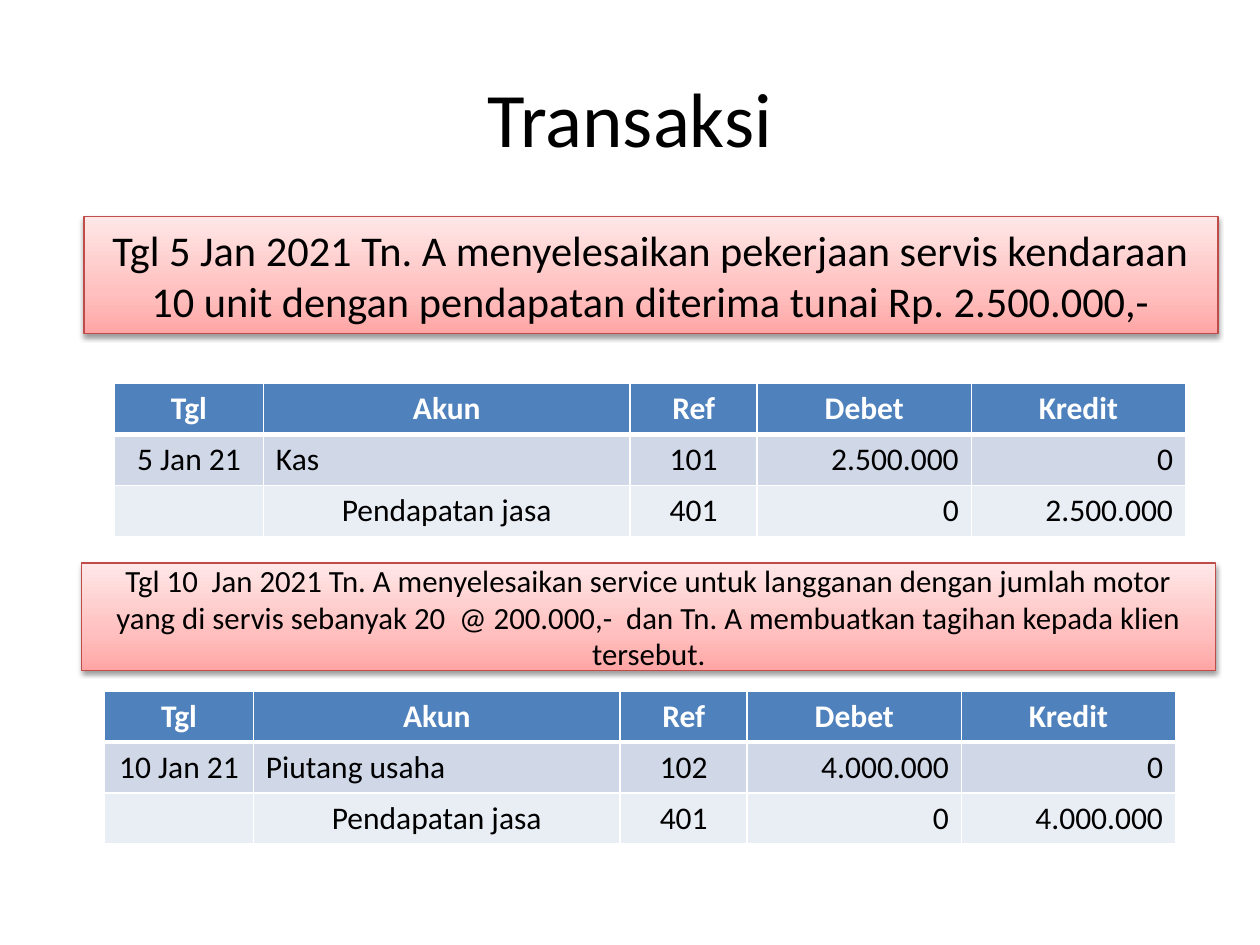
import copy
from dataclasses import dataclass

import lxml.etree
import pptx
import pptx.dml.color
import pptx.enum.shapes
import pptx.enum.text
import pptx.oxml
import pptx.oxml.ns
import pptx.slide
import pptx.table
import pptx.text.text
import pptx.util

Pt = pptx.util.Pt
RGBColor = pptx.dml.color.RGBColor
Align = pptx.enum.text.PP_ALIGN
qn = pptx.oxml.ns.qn

BLACK = RGBColor(0x00, 0x00, 0x00)
WHITE = RGBColor(0xFF, 0xFF, 0xFF)
HEADER_BLUE = RGBColor(0x4F, 0x81, 0xBD)
BAND_DARK = RGBColor(0xD0, 0xD8, 0xE8)
BAND_LIGHT = RGBColor(0xE9, 0xED, 0xF4)
BOX_LINE = RGBColor(0xBF, 0x4C, 0x48)
BOX_STOPS = (
    (0, RGBColor(0xFF, 0xA6, 0xA5)),
    (0.35, RGBColor(0xFF, 0xC0, 0xBF)),
    (1, RGBColor(0xFF, 0xE7, 0xE7)),
)
FONT = "Calibri"
HEADINGS = ("Tgl", "Akun", "Ref", "Debet", "Kredit")
COLUMN_WIDTHS = (85, 209.6, 72.6, 122.4, 122.4)
ROW_FILLS = (HEADER_BLUE, BAND_DARK, BAND_LIGHT)
ROW_HEIGHT = 29.2
BODY_ALIGNMENTS = (Align.CENTER, Align.LEFT, Align.CENTER, Align.RIGHT, Align.RIGHT)


@dataclass(frozen=True)
class Description:
    text: str
    left: float
    top: float
    height: float
    font_size: float


@dataclass(frozen=True)
class Journal:
    left: float
    top: float
    date: str
    debit_account: str
    debit_ref: str
    amount: str

    def rows(self) -> tuple[tuple[str, ...], ...]:
        return (
            HEADINGS,
            (self.date, self.debit_account, self.debit_ref, self.amount, "0"),
            ("", "Pendapatan jasa", "401", "0", self.amount),
        )


TRANSACTIONS = (
    (
        Description(
            "Tgl 5 Jan 2021 Tn. A menyelesaikan pekerjaan servis kendaraan "
            "10 unit dengan pendapatan diterima tunai Rp. 2.500.000,-",
            48, 123.8, 67, 24.2,
        ),
        Journal(65.5, 219, "5 Jan 21", "Kas", "101", "2.500.000"),
    ),
    (
        Description(
            "Tgl 10  Jan 2021 Tn. A menyelesaikan service untuk langganan dengan "
            "jumlah motor yang di servis sebanyak 20  @ 200.000,-  dan Tn. A "
            "membuatkan tagihan kepada klien tersebut.",
            46.8, 321.8, 61.2, 17.6,
        ),
        Journal(59.8, 394.8, "10 Jan 21", "Piutang usaha", "102", "4.000.000"),
    ),
)


def write_text(
    text_frame: pptx.text.text.TextFrame,
    text: str,
    size: float,
    alignment: Align,
    color: RGBColor = BLACK,
    bold: bool = False,
) -> None:
    text_frame.text = text
    text_frame.word_wrap = True
    paragraph = text_frame.paragraphs[0]
    paragraph.alignment = alignment
    paragraph.font.size = Pt(size)
    for run in paragraph.runs:
        run.font.name = FONT
        run.font.size = Pt(size)
        run.font.color.rgb = color
        run.font.bold = bold


def add_title(slide: pptx.slide.Slide, text: str) -> None:
    title = slide.shapes.add_textbox(Pt(36), Pt(21.6), Pt(648), Pt(90))
    write_text(title.text_frame, text, 44, Align.CENTER)
    title.text_frame.vertical_anchor = pptx.enum.text.MSO_ANCHOR.MIDDLE


def add_description(slide: pptx.slide.Slide, description: Description) -> None:
    shape = slide.shapes.add_shape(
        pptx.enum.shapes.MSO_SHAPE.RECTANGLE,
        Pt(description.left), Pt(description.top), Pt(648), Pt(description.height),
    )
    shape.fill.gradient()
    shape.fill.gradient_angle = 90
    properties = shape.element.spPr
    stop_list = properties.find(".//" + qn("a:gsLst"))
    stop_list.append(copy.deepcopy(stop_list[-1]))
    for stop, (position, color) in zip(shape.fill.gradient_stops, BOX_STOPS):
        stop.position = position
        stop.color.rgb = color
    shape.line.color.rgb = BOX_LINE
    shape.line.width = Pt(0.75)

    shape.shadow.inherit = False
    shadow = lxml.etree.SubElement(
        properties.find(qn("a:effectLst")), qn("a:outerShdw"),
        blurRad=str(Pt(3.1)), dist=str(Pt(1.6)), dir="5400000", rotWithShape="0",
    )
    shadow_color = lxml.etree.SubElement(shadow, qn("a:srgbClr"), val=str(BLACK))
    lxml.etree.SubElement(shadow_color, qn("a:alpha"), val="38000")

    write_text(shape.text_frame, description.text, description.font_size, Align.CENTER)
    shape.text_frame.vertical_anchor = pptx.enum.text.MSO_ANCHOR.MIDDLE


def set_borders(cell: pptx.table._Cell, top: float, bottom: float) -> None:
    properties = cell._tc.get_or_add_tcPr()
    for side, width in (("L", 1), ("R", 1), ("T", top), ("B", bottom)):
        line = lxml.etree.SubElement(properties, qn(f"a:ln{side}"), w=str(Pt(width)))
        fill = lxml.etree.SubElement(line, qn("a:solidFill"))
        lxml.etree.SubElement(fill, qn("a:srgbClr"), val=str(WHITE))


def add_journal(slide: pptx.slide.Slide, journal: Journal) -> None:
    rows = journal.rows()
    table = slide.shapes.add_table(
        len(rows), len(HEADINGS), Pt(journal.left), Pt(journal.top),
        Pt(sum(COLUMN_WIDTHS)), Pt(ROW_HEIGHT * len(rows)),
    ).table
    for column, width in zip(table.columns, COLUMN_WIDTHS):
        column.width = Pt(width)
    for row_index, values in enumerate(rows):
        table.rows[row_index].height = Pt(ROW_HEIGHT)
        is_header = row_index == 0
        for column_index, value in enumerate(values):
            cell = table.cell(row_index, column_index)
            set_borders(cell, 3 if row_index == 1 else 1, 3 if is_header else 1)
            cell.fill.solid()
            cell.fill.fore_color.rgb = ROW_FILLS[row_index]
            alignment = BODY_ALIGNMENTS[column_index]
            if is_header or row_index == 2 and column_index == 1:
                alignment = Align.CENTER
            write_text(
                cell.text_frame, value, 18, alignment,
                WHITE if is_header else BLACK, is_header,
            )


def main() -> None:
    presentation = pptx.Presentation()
    presentation.slide_width = Pt(720)
    presentation.slide_height = Pt(540)
    slide = presentation.slides.add_slide(presentation.slide_layouts[6])
    add_title(slide, "Transaksi")
    for description, journal in TRANSACTIONS:
        add_description(slide, description)
        add_journal(slide, journal)
    presentation.save("out.pptx")


if __name__ == "__main__":
    main()
